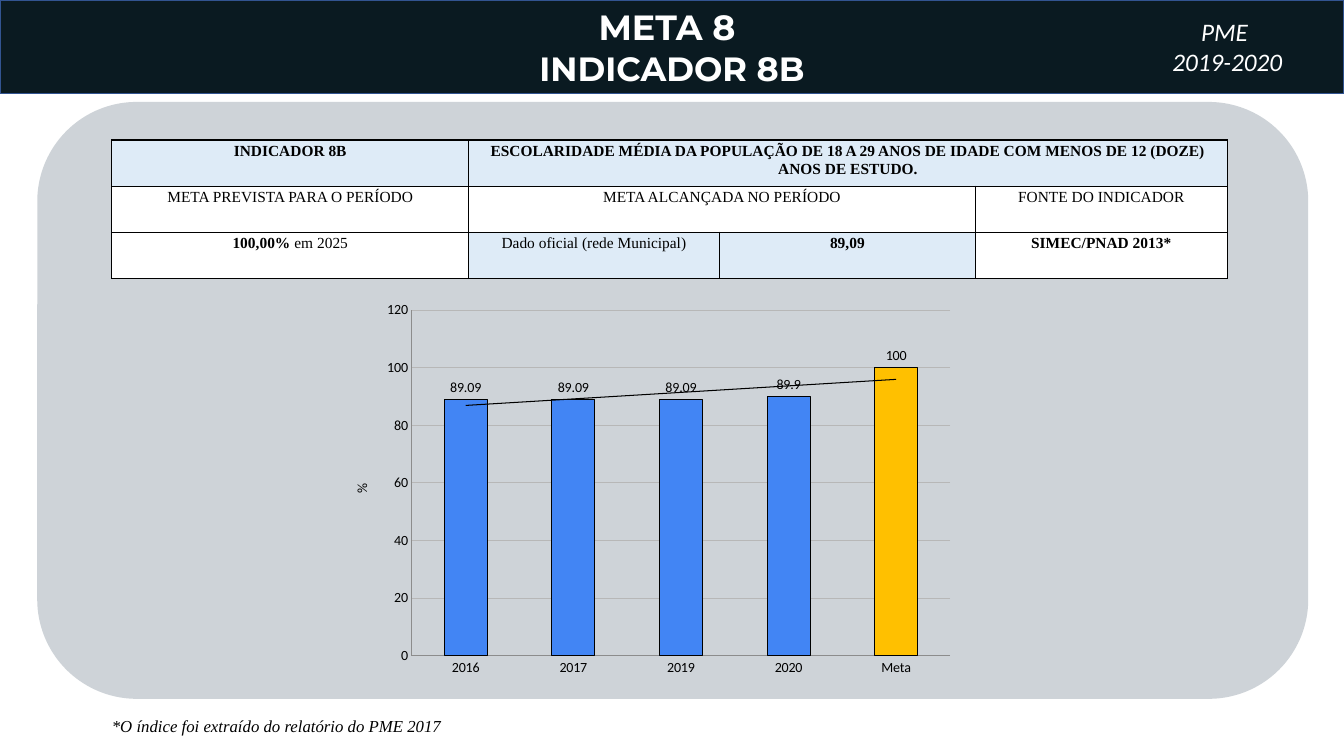
"""Builds the slide on indicator 8B: banner, indicator table and schooling chart."""
from lxml import etree
from pptx import Presentation
from pptx.chart.data import CategoryChartData
from pptx.dml.color import RGBColor
from pptx.enum.chart import XL_CHART_TYPE, XL_LABEL_POSITION, XL_TICK_MARK
from pptx.enum.shapes import MSO_SHAPE
from pptx.enum.text import MSO_ANCHOR, MSO_AUTO_SIZE, PP_ALIGN
from pptx.oxml import parse_xml
from pptx.oxml.ns import nsdecls, qn
from pptx.util import Cm, Pt

CENTER, LEFT = PP_ALIGN.CENTER, PP_ALIGN.LEFT
MIDDLE = MSO_ANCHOR.MIDDLE
NO_TICK = XL_TICK_MARK.NONE

COLORS = {
    "banner": "0A1A21", "banner_line": "325491", "panel": "CED3D8",
    "white": "FFFFFF", "black": "000000", "pale": "DEEBF7",
    "grid": "B7B7B7", "axis": "8C8C8C", "bar": "4285F4", "target": "FFC000",
}
SERIF = "Times New Roman"
TITLE_LINES = [("META 8 ", 25), ("INDICADOR 8B", 24)]
PERIOD_LINES = ["PME ", "2019-2020"]
FOOTNOTE = "*O índice foi extraído do relatório do PME 2017"

COLUMN_WIDTHS = [8.99, 6.32, 6.45, 6.35]
ROW_HEIGHT = 1.16
TABLE_CELLS = [
    (0, 0, 1, "pale", [("INDICADOR 8B", True)]),
    (0, 1, 3, "pale", [("ESCOLARIDADE MÉDIA DA POPULAÇÃO DE 18 A 29 ANOS DE IDADE "
                        "COM MENOS DE 12 (DOZE) ANOS DE ESTUDO.", True)]),
    (1, 0, 1, "white", [("META PREVISTA PARA O PERÍODO", False)]),
    (1, 1, 2, "white", [("META ALCANÇADA NO PERÍODO", False)]),
    (1, 3, 1, "white", [("FONTE DO INDICADOR", False)]),
    (2, 0, 1, "white", [("100,00%", True), (" em 2025", False)]),
    (2, 1, 1, "pale", [("Dado oficial (rede Municipal)", False)]),
    (2, 2, 1, "pale", [("89,09", True)]),
    (2, 3, 1, "white", [("SIMEC/PNAD 2013*", True)]),
]
YEARS = ["2016", "2017", "2019", "2020", "Meta"]
SCHOOLING = [89.09, 89.09, 89.09, 89.9, 100]


def color(name):
    return RGBColor.from_string(COLORS[name])


def paint(fill, name):
    fill.solid()
    fill.fore_color.rgb = color(name)


def draw_line(line, name, width):
    line.color.rgb = color(name)
    line.width = Pt(width)


def style(font, name, size, color_name, bold=False, italic=False):
    font.name, font.size, font.bold, font.italic = name, Pt(size), bold, italic
    font.color.rgb = color(color_name)


def add_run(paragraph, text, *font_style, **options):
    run = paragraph.add_run()
    run.text = text
    style(run.font, *font_style, **options)


def next_paragraph(frame, index, alignment):
    paragraph = frame.add_paragraph() if index else frame.paragraphs[0]
    paragraph.alignment = alignment
    return paragraph


def add_banner(slide):
    banner = slide.shapes.title
    banner.left, banner.top, banner.width, banner.height = Cm(0), Cm(0), Cm(33.87), Cm(2.36)
    paint(banner.fill, "banner")
    draw_line(banner.line, "banner_line", 1)
    frame = banner.text_frame
    frame.auto_size = MSO_AUTO_SIZE.NONE
    frame.vertical_anchor = MIDDLE
    for index, (text, size) in enumerate(TITLE_LINES):
        paragraph = next_paragraph(frame, index, CENTER)
        add_run(paragraph, text, "Montserrat", size, "white", bold=True)


def add_panel(slide):
    panel = slide.shapes.add_shape(
        MSO_SHAPE.ROUNDED_RECTANGLE, Cm(0.94), Cm(2.57), Cm(32.03), Cm(15.04))
    panel.shadow.inherit = False
    paint(panel.fill, "panel")
    panel.line.fill.background()


def add_text(slide, box, lines, alignment, *font_style):
    frame = slide.shapes.add_textbox(*map(Cm, box)).text_frame
    frame.word_wrap = True
    for index, text in enumerate(lines):
        add_run(next_paragraph(frame, index, alignment), text, *font_style, italic=True)


def add_borders(cell):
    properties = cell._tc.get_or_add_tcPr()
    for position, side in enumerate(("lnL", "lnR", "lnT", "lnB")):
        properties.insert(position, parse_xml(
            f'<a:{side} {nsdecls("a")} w="12700"><a:solidFill>'
            f'<a:srgbClr val="{COLORS["black"]}"/></a:solidFill></a:{side}>'))


def add_indicator_table(slide):
    table = slide.shapes.add_table(
        3, len(COLUMN_WIDTHS), Cm(2.82), Cm(3.53),
        Cm(sum(COLUMN_WIDTHS)), Cm(3 * ROW_HEIGHT)).table
    for column, width in zip(table.columns, COLUMN_WIDTHS):
        column.width = Cm(width)
    for row in table.rows:
        row.height = Cm(ROW_HEIGHT)
    for row, column, span, fill, runs in TABLE_CELLS:
        cell = table.cell(row, column)
        if span > 1:
            cell.merge(table.cell(row, column + span - 1))
        cell.margin_left = cell.margin_right = Cm(0.15)
        cell.margin_top, cell.margin_bottom = Cm(0.03), Cm(0.18)
        paragraph = next_paragraph(cell.text_frame, 0, CENTER)
        paragraph.line_spacing = 1.07
        for text, bold in runs:
            add_run(paragraph, text, SERIF, 11, "black", bold=bold)
        for covered in range(column, column + span):
            paint(table.cell(row, covered).fill, fill)
            add_borders(table.cell(row, covered))


def add_trend_line(series):
    trend = parse_xml(
        f'<c:trendline {nsdecls("c", "a")}><c:spPr><a:ln w="9525"><a:solidFill>'
        f'<a:srgbClr val="{COLORS["black"]}"/></a:solidFill></a:ln></c:spPr>'
        '<c:trendlineType val="linear"/><c:dispRSqr val="0"/><c:dispEq val="0"/>'
        '</c:trendline>')
    series._element.find(qn("c:cat")).addprevious(trend)


def add_schooling_chart(slide):
    data = CategoryChartData()
    data.categories = YEARS
    data.add_series("Escolaridade média", SCHOOLING)
    chart = slide.shapes.add_chart(
        XL_CHART_TYPE.COLUMN_CLUSTERED, Cm(8.38), Cm(7.42), Cm(15.88), Cm(9.8), data).chart
    style(chart.font, "Calibri", 10, "black")
    chart.has_legend = chart.has_title = False
    for axis in (chart.category_axis, chart.value_axis):
        axis.major_tick_mark = axis.minor_tick_mark = NO_TICK
        draw_line(axis.format.line, "axis", 0.75)
    values = chart.value_axis
    values.minimum_scale, values.maximum_scale, values.major_unit = 0, 120, 20
    draw_line(values.major_gridlines.format.line, "grid", 0.75)
    add_run(values.axis_title.text_frame.paragraphs[0], "%", "Calibri", 10, "black")

    plot = chart.plots[0]
    plot.gap_width = 150
    plot.vary_by_categories = False
    series = plot.series[0]
    series.invert_if_negative = False
    target = series.points[len(YEARS) - 1]
    for bar, name in ((series, "bar"), (target, "target")):
        paint(bar.format.fill, name)
        draw_line(bar.format.line, "black", 0.75)
    labels = series.data_labels
    labels.show_value = True
    labels.position = XL_LABEL_POSITION.OUTSIDE_END
    style(labels.font, "Calibri", 10, "black")
    add_trend_line(series)


def main():
    presentation = Presentation()
    presentation.slide_width, presentation.slide_height = Cm(33.87), Cm(19.05)
    slide = presentation.slides.add_slide(presentation.slide_layouts[5])
    add_banner(slide)
    add_panel(slide)
    add_indicator_table(slide)
    add_text(slide, (2.57, 17.91, 18.03, 0.76), [FOOTNOTE], LEFT, SERIF, 12, "black")
    add_schooling_chart(slide)
    add_text(slide, (28.03, 0.28, 5.8, 1.8), PERIOD_LINES, CENTER, "Calibri", 18, "white")
    presentation.save("out.pptx")


if __name__ == "__main__":
    main()
